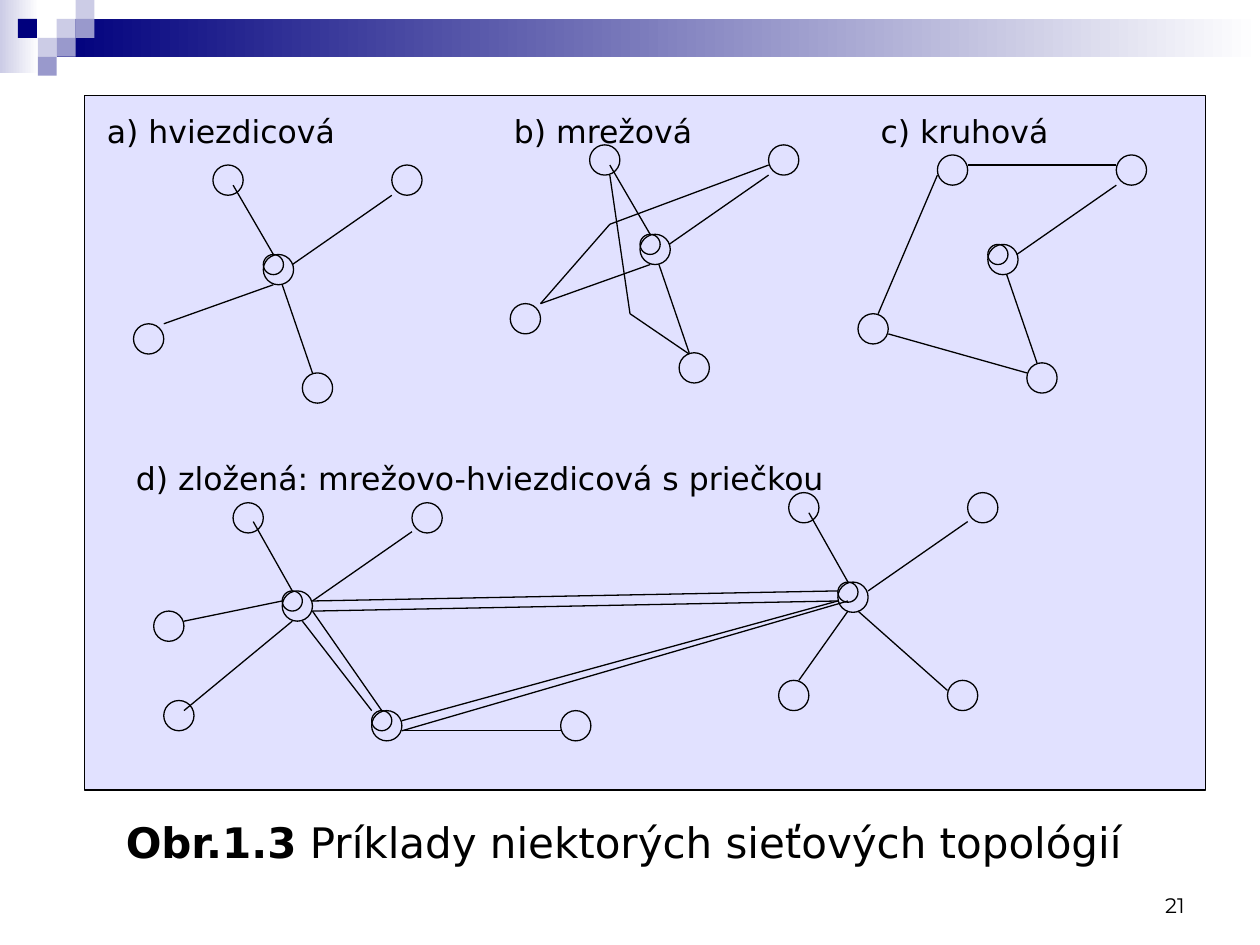
from lxml import etree
from pptx import Presentation
from pptx.dml.color import RGBColor
from pptx.enum.shapes import MSO_CONNECTOR, MSO_SHAPE
from pptx.enum.text import MSO_ANCHOR, PP_ALIGN
from pptx.oxml.ns import qn
from pptx.util import Inches, Pt

RECTANGLE, OVAL = MSO_SHAPE.RECTANGLE, MSO_SHAPE.OVAL
STRAIGHT = MSO_CONNECTOR.STRAIGHT
LEFT, RIGHT = PP_ALIGN.LEFT, PP_ALIGN.RIGHT
TOP, BOTTOM = MSO_ANCHOR.TOP, MSO_ANCHOR.BOTTOM

BLACK = RGBColor(0, 0, 0)
WHITE = RGBColor(0xFF, 0xFF, 0xFF)
NAVY = RGBColor(0x00, 0x00, 0x7D)
LAVENDER = RGBColor(0xCC, 0xCC, 0xE6)
PERIWINKLE = RGBColor(0x99, 0x99, 0xCC)
PANEL_BLUE = RGBColor(0x99, 0x99, 0xFF)

BODY_FONT, NUMBER_FONT = "DejaVu Sans", "Montserrat"
LINE_WIDTH = Pt(0.75)
NODE, HUB_MARK, TILE = 0.24, 0.16, 0.15

# The small networks share one layout: four nodes around a hub
SMALL_NODES = [(0.63, 0), (2.05, 0), (0, 1.26), (1.34, 1.65)]
SMALL_HUBS = [(1.03, 0.71)]
SPOKE_UPPER_LEFT = (0.79, 0.16, 1.11, 0.71)
SPOKE_UPPER_RIGHT = (1.26, 0.79, 2.05, 0.24)
SPOKE_LOWER_LEFT = (0.24, 1.26, 1.11, 0.95)
SPOKE_LOWER_RIGHT = (1.18, 0.95, 1.42, 1.65)
STAR_LINKS = [SPOKE_UPPER_LEFT, SPOKE_UPPER_RIGHT,
              SPOKE_LOWER_LEFT, SPOKE_LOWER_RIGHT]
MESH_LINKS = STAR_LINKS + [
    (0.24, 1.26, 0.79, 0.63), (0.79, 0.63, 2.05, 0.16),
    (0.79, 0.24, 0.95, 1.34), (0.95, 1.34, 1.42, 1.66)]
RING_LINKS = [
    SPOKE_UPPER_RIGHT, SPOKE_LOWER_RIGHT, (2.05, 0.08, 0.87, 0.08),
    (0.63, 0.16, 0.16, 1.26), (0.24, 1.42, 1.34, 1.73)]

# The compound network joins three hubs
COMPOUND_NODES = [(0.63, 0.08), (2.05, 0.08), (0.08, 1.65), (0, 0.94),
                  (3.23, 1.73), (5.04, 0), (6.46, 0), (4.96, 1.49), (6.3, 1.49)]
COMPOUND_HUBS = [(1.02, 0.78), (1.73, 1.73), (5.43, 0.71)]
COMPOUND_LINKS = [
    # spokes of the left, lower and right hubs
    (0.79, 0.23, 1.1, 0.78), (1.26, 0.86, 2.05, 0.31),
    (0.24, 1.73, 1.1, 1.02), (0.24, 1.02, 1.02, 0.86),
    (1.97, 1.89, 3.23, 1.89),
    (5.2, 0.16, 5.51, 0.71), (5.67, 0.78, 6.46, 0.23),
    (5.12, 1.49, 5.51, 0.94), (5.59, 0.94, 6.3, 1.57),
    # double trunks between the hubs
    (1.18, 1.02, 1.73, 1.73), (1.26, 0.94, 1.81, 1.73),
    (1.26, 0.86, 5.43, 0.78), (1.26, 0.94, 5.43, 0.86),
    (1.97, 1.81, 5.43, 0.86), (1.97, 1.89, 5.51, 0.86)]

# label, label box, network origin, nodes, hubs, links
TOPOLOGIES = [
    ("a) hviezdicová", (0.75, 0.84, 2.52, 0.4), (1.06, 1.31),
     SMALL_NODES, SMALL_HUBS, STAR_LINKS),
    ("b) mrežová", (3.98, 0.84, 2.52, 0.4), (4.05, 1.15),
     SMALL_NODES, SMALL_HUBS, MESH_LINKS),
    ("c) kruhová", (6.89, 0.84, 2.52, 0.4), (6.81, 1.23),
     SMALL_NODES, SMALL_HUBS, RING_LINKS),
    ("d) zložená: mrežovo-hviezdicová s priečkou", (0.98, 3.59, 5.83, 0.4),
     (1.22, 3.91), COMPOUND_NODES, COMPOUND_HUBS, COMPOUND_LINKS),
]


def add_shape(page, kind, box, fill=None, fade_to=None, outline=None):
    shape = page.shapes.add_shape(kind, *map(Inches, box))
    shape.shadow.inherit = False
    if fade_to is not None:
        shape.fill.gradient()
        shape.fill.gradient_angle = 0
        for stop, color in zip(shape.fill.gradient_stops, (fill, fade_to)):
            stop.color.rgb = color
    elif fill is not None:
        shape.fill.solid()
        shape.fill.fore_color.rgb = fill
    else:
        shape.fill.background()
    if outline is None:
        shape.line.fill.background()
    else:
        shape.line.color.rgb = outline
        shape.line.width = LINE_WIDTH
    return shape


def add_text(page, box, spans, size=18, font=BODY_FONT, align=LEFT, anchor=TOP):
    """Place one paragraph; spans are (text, bold) pairs."""
    frame = page.shapes.add_textbox(*map(Inches, box)).text_frame
    frame.word_wrap = True
    frame.vertical_anchor = anchor
    para = frame.paragraphs[0]
    para.alignment = align
    for text, bold in spans:
        span = para.add_run()
        span.text = text
        span.font.name = font
        span.font.size = Pt(size)
        span.font.bold = bold
        span.font.color.rgb = BLACK


def add_link(page, x1, y1, x2, y2):
    link = page.shapes.add_connector(STRAIGHT, *map(Inches, (x1, y1, x2, y2)))
    link.line.color.rgb = BLACK
    link.line.width = LINE_WIDTH
    etree.SubElement(link._element.spPr, qn("a:effectLst"))


def add_header(page, left, top, width):
    add_shape(page, RECTANGLE, (left, top, 0.31, 0.58), LAVENDER, fade_to=WHITE)
    add_shape(page, RECTANGLE, (left + 0.45, top + TILE, width - 0.45, 2 * TILE),
              NAVY, fade_to=WHITE)
    # Checkered tiles by column and row
    for column, row, color in [
            (3, 1, LAVENDER), (4, 0, LAVENDER), (4, 1, PERIWINKLE),
            (2, 2, LAVENDER), (0.95, 1, NAVY), (3, 2, PERIWINKLE),
            (2, 3, PERIWINKLE)]:
        add_shape(page, RECTANGLE,
                  (left + column * TILE, top + row * TILE, TILE, TILE), color)


def add_panel(page, box):
    panel = add_shape(page, RECTANGLE, box, PANEL_BLUE, outline=BLACK)
    color = panel._element.spPr.find(qn("a:solidFill"))[0]
    etree.SubElement(color, qn("a:alpha"), val="29000")


def add_network(page, left, top, nodes, hubs, links):
    circles = [(x, y, NODE) for x, y in nodes + hubs]
    circles += [(x, y, HUB_MARK) for x, y in hubs]
    for x, y, size in circles:
        add_shape(page, OVAL, (left + x, top + y, size, size), outline=BLACK)
    for x1, y1, x2, y2 in links:
        add_link(page, left + x1, top + y1, left + x2, top + y2)


def main():
    deck = Presentation()
    deck.slide_width, deck.slide_height = Inches(10), Inches(7.5)
    page = deck.slides.add_slide(deck.slide_layouts[6])

    add_header(page, 0, 0, 10)
    add_text(page, (7.17, 6.83, 2.33, 0.5), [("21", False)], size=12,
             font=NUMBER_FONT, align=RIGHT, anchor=BOTTOM)
    add_panel(page, (0.67, 0.76, 8.9, 5.51))
    for label, label_box, origin, nodes, hubs, links in TOPOLOGIES:
        add_network(page, *origin, nodes, hubs, links)
        add_text(page, label_box, [(label, False)])

    # Caption
    add_text(page, (0.9, 6.43, 8.74, 0.5),
             [("Obr.1.3", True),
              (" Príklady niektorých sieťových topológií", False)], size=24)
    deck.save("out.pptx")


if __name__ == "__main__":
    main()
